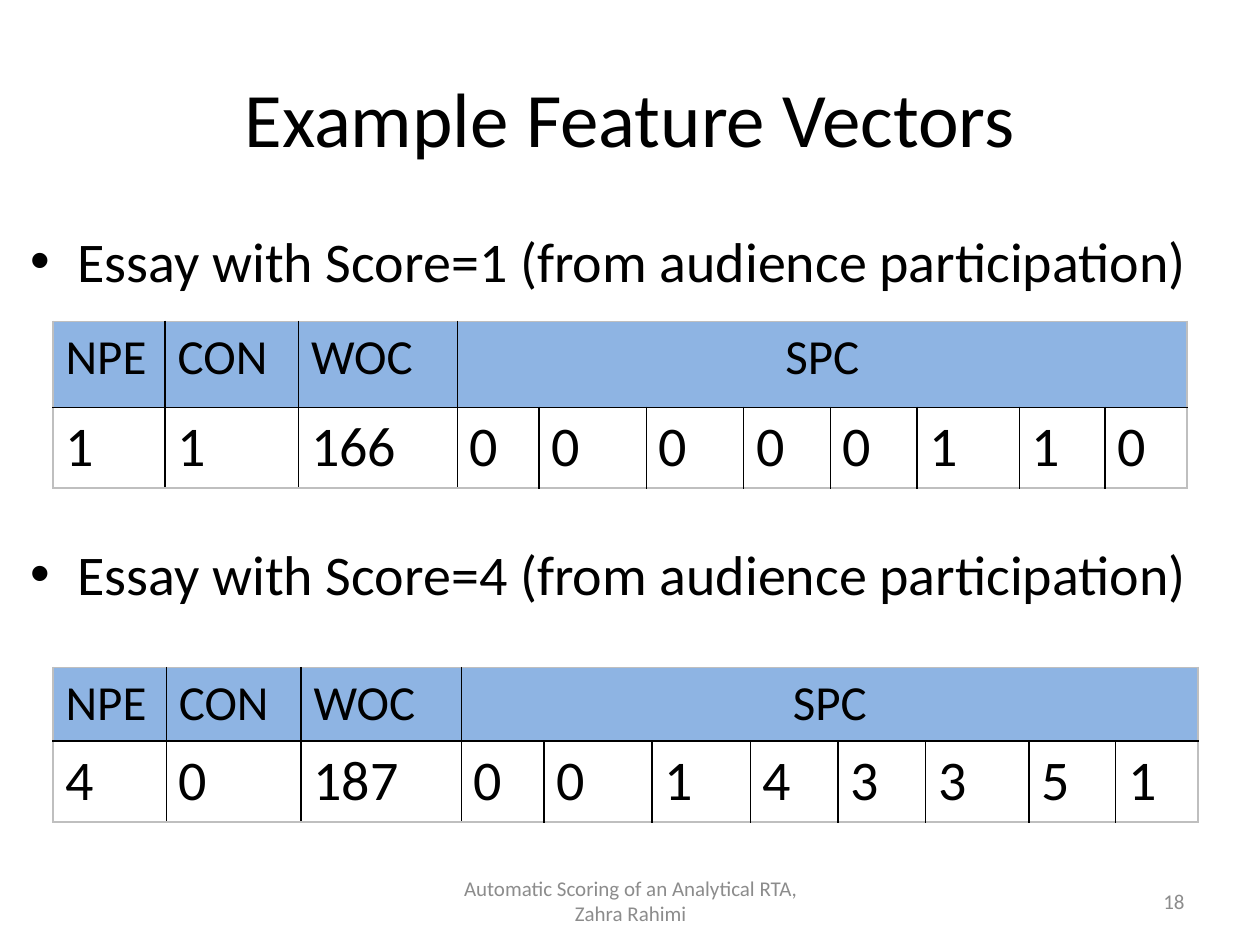
from dataclasses import dataclass

import pptx
import pptx.dml.color
import pptx.enum.text
import pptx.util
from lxml import etree
from pptx.oxml.ns import qn

Cm, Pt = pptx.util.Cm, pptx.util.Pt
RGBColor = pptx.dml.color.RGBColor
ALIGN = pptx.enum.text.PP_ALIGN
ANCHOR = pptx.enum.text.MSO_ANCHOR

BLACK = RGBColor(0x00, 0x00, 0x00)
GREY = RGBColor(0x8C, 0x8C, 0x8C)
EDGE = RGBColor(0xBF, 0xBF, 0xBF)
HEADER = RGBColor(0x8E, 0xB4, 0xE3)

FONT = "Calibri"
COLUMNS = (2.26, 2.69, 3.2, 1.65, 2.16, 1.96, 1.75, 1.75, 2.06, 1.73, 1.65)
HEADINGS = ("NPE", "CON", "WOC", "SPC")


@dataclass
class Label:
    text: str
    left: float
    top: float
    width: float
    height: float
    size: int
    color: RGBColor
    align: ALIGN


@dataclass
class FeatureTable:
    top: float
    header_height: float
    scale: float
    values: tuple


LABELS = (
    Label("Example Feature Vectors", 1.27, 0.76, 22.86, 3.18, 44, BLACK, ALIGN.CENTER),
    Label("Automatic Scoring of an Analytical RTA, Zahra Rahimi",
          8.69, 17.65, 8.05, 1.02, 12, GREY, ALIGN.CENTER),
    Label("18", 18.21, 17.65, 5.92, 1.02, 12, GREY, ALIGN.RIGHT),
)
ESSAYS = (
    ("Essay with Score=1 (from audience participation)", 0),
    ("Essay with Score=4 (from audience participation)", 140.4),
)
TABLES = (
    FeatureTable(6.48, 1.73, 1, (1, 1, 166, 0, 0, 0, 0, 0, 1, 1, 0)),
    FeatureTable(13.46, 1.48, 1.01, (4, 0, 187, 0, 0, 1, 4, 3, 3, 5, 1)),
)


def write(p, text: str, size: int, color: RGBColor, align: ALIGN) -> None:
    p.alignment = align
    r = p.add_run()
    r.text = text
    for name, value in {"name": FONT, "size": Pt(size)}.items():
        setattr(r.font, name, value)
    r.font.color.rgb = color


def add_label(s, label: Label) -> None:
    sp = s.shapes.add_textbox(Cm(label.left), Cm(label.top),
                              Cm(label.width), Cm(label.height))
    tf = sp.text_frame
    for name, value in {"word_wrap": True, "vertical_anchor": ANCHOR.MIDDLE}.items():
        setattr(tf, name, value)
    write(tf.paragraphs[0], label.text, label.size, label.color, label.align)


def add_bullets(s) -> None:
    tf = s.shapes.add_textbox(Cm(0.36), Cm(4.45), Cm(24.64), Cm(12.57)).text_frame
    tf.word_wrap = True
    for i, (text, gap) in enumerate(ESSAYS):
        p = tf.add_paragraph() if i else tf.paragraphs[0]
        write(p, text, 32, BLACK, ALIGN.LEFT)
        p.space_before = Pt(gap)
        pPr = p._p.get_or_add_pPr()
        pPr.set("marL", str(Cm(0.95)))
        pPr.set("indent", str(-Cm(0.95)))
        etree.SubElement(pPr, qn("a:buFont"), typeface="Arial")
        etree.SubElement(pPr, qn("a:buChar"), char="•")


def add_borders(cell, row: int, col: int) -> None:
    outer = {"lnL": col == 0, "lnR": col == len(COLUMNS) - 1 or (row == 0 and col == 3),
             "lnT": row == 0, "lnB": row == 1}
    tcPr = cell._tc.get_or_add_tcPr()
    for tag, is_outer in outer.items():
        ln = etree.SubElement(tcPr, qn(f"a:{tag}"), w=str(Pt(1)))
        fill = etree.SubElement(ln, qn("a:solidFill"))
        etree.SubElement(fill, qn("a:srgbClr"), val=str(EDGE if is_outer else BLACK))


def add_feature_table(s, spec: FeatureTable) -> None:
    heights = (spec.header_height, 1.63)
    widths = [w * spec.scale for w in COLUMNS]
    table = s.shapes.add_table(2, len(widths), Cm(1.07), Cm(spec.top),
                               Cm(sum(widths)), Cm(sum(heights))).table
    for column, width in zip(table.columns, widths):
        column.width = Cm(width)
    for row, height in zip(table.rows, heights):
        row.height = Cm(height)
    # SPC covers all the remaining columns
    table.cell(0, 3).merge(table.cell(0, len(widths) - 1))
    for row, (texts, size) in enumerate(((HEADINGS, 28), (spec.values, 32))):
        for col in range(len(widths)):
            cell = table.cell(row, col)
            add_borders(cell, row, col)
            if row == 0:
                cell.fill.solid()
                cell.fill.fore_color.rgb = HEADER
            else:
                cell.fill.background()
            if col < len(texts):
                align = ALIGN.CENTER if texts[col] == "SPC" else ALIGN.LEFT
                write(cell.text_frame.paragraphs[0], str(texts[col]), size, BLACK, align)


def main() -> None:
    prs = pptx.Presentation()
    prs.slide_width, prs.slide_height = Cm(25.4), Cm(19.05)
    s = prs.slides.add_slide(prs.slide_layouts[6])
    # Title, footer and slide number
    for label in LABELS:
        add_label(s, label)
    # Essay headings and their feature vectors
    add_bullets(s)
    for spec in TABLES:
        add_feature_table(s, spec)
    prs.save("out.pptx")


if __name__ == "__main__":
    main()
